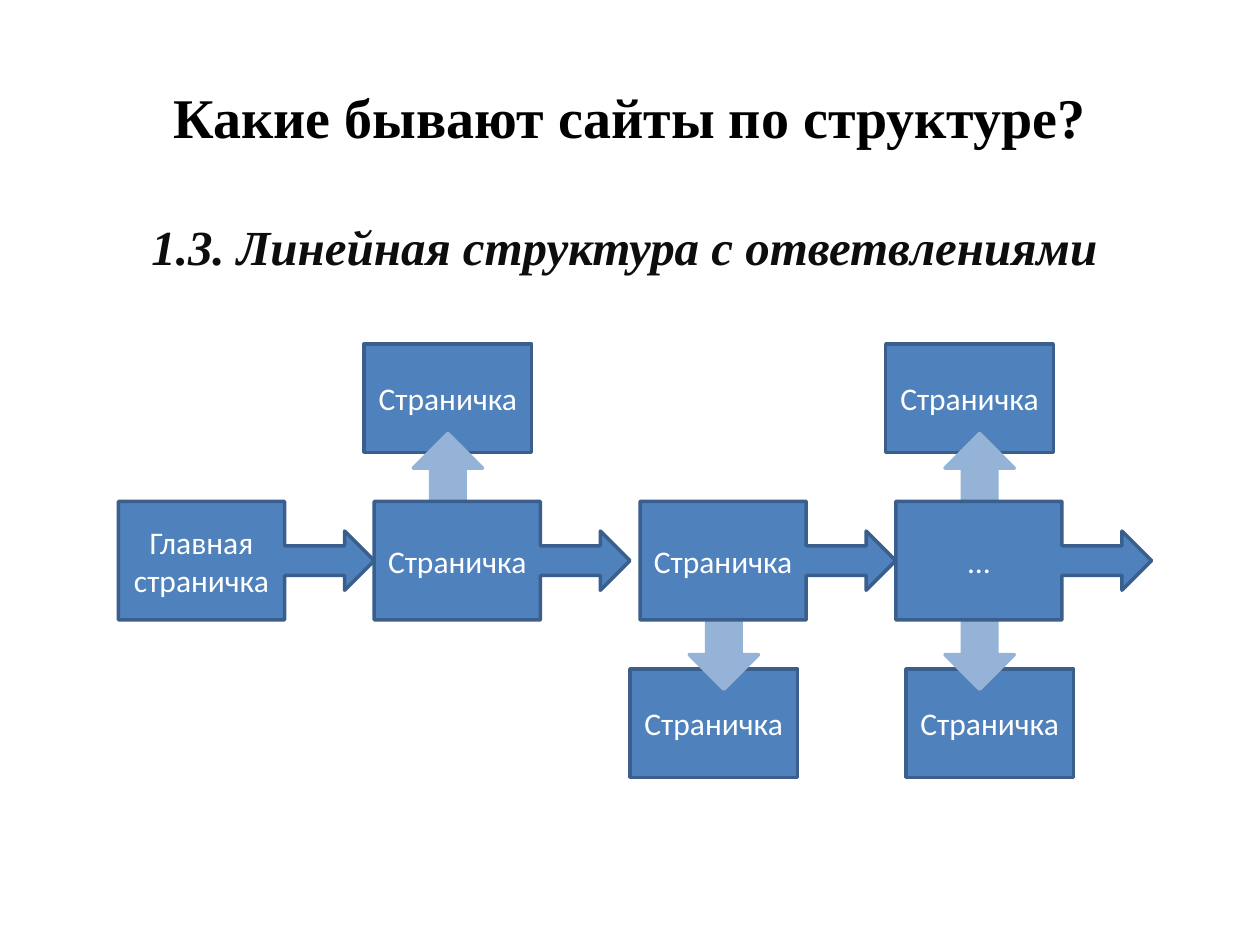
from dataclasses import dataclass

import pptx
import pptx.dml.color
import pptx.enum.shapes
import pptx.enum.text
import pptx.shapes.autoshape
import pptx.text.text
import pptx.util

Inches = pptx.util.Inches
Pt = pptx.util.Pt
RGB = pptx.dml.color.RGBColor
MSO = pptx.enum.shapes.MSO_SHAPE


@dataclass(frozen=True)
class Theme:
    heading_font: str = "Times New Roman"
    body_font: str = "Calibri"
    title_color: str = "000000"
    subtitle_color: str = "0D0D0D"
    box_fill: str = "4F81BD"
    box_line: str = "3A5F8C"
    box_text: str = "FFFFFF"
    branch: str = "95B3D7"
    title_size: int = 32
    subtitle_size: int = 28
    box_size: int = 18
    line_width: int = 2


@dataclass(frozen=True)
class Box:
    left: float
    top: float
    lines: tuple[str, ...] = ("Страничка",)


@dataclass(frozen=True)
class Branch:
    left: float
    up: bool


THEME = Theme()

UPPER, LOWER = 2.73, 5.31
PAGE_SIZE = (1.33, 0.86)
SIDE_PAGES = [Box(2.89, UPPER), Box(7.03, UPPER), Box(7.19, LOWER), Box(5, LOWER)]

BRANCH_SIZE = (0.55, 1.25)
BRANCHES = [Branch(3.28, True), Branch(7.5, True), Branch(5.47, False), Branch(7.5, False)]

CHAIN_TOP = 3.98
STEP_SIZE = (2.03, 0.94)
CHAIN = [
    Box(0.94, CHAIN_TOP, ("Главная", "страничка")),
    Box(2.97, CHAIN_TOP),
    Box(5.08, CHAIN_TOP),
    Box(7.11, CHAIN_TOP, ("…",)),
]


def write(tf: pptx.text.text.TextFrame, lines: tuple[str, ...], font: str, size: int,
          color: str, bold: bool = False, italic: bool = False) -> None:
    """Fill a text frame with centred paragraphs, one for each line."""
    tf.word_wrap = True
    tf.vertical_anchor = pptx.enum.text.MSO_ANCHOR.MIDDLE
    for i, line in enumerate(lines):
        p = tf.paragraphs[0] if i == 0 else tf.add_paragraph()
        p.alignment = pptx.enum.text.PP_ALIGN.CENTER
        r = p.add_run()
        r.text = line
        r.font.name = font
        r.font.size = Pt(size)
        r.font.bold = bold
        r.font.italic = italic
        r.font.color.rgb = RGB.from_string(color)


def place(sp, left: float, top: float, width: float, height: float) -> None:
    sp.left, sp.top = Inches(left), Inches(top)
    sp.width, sp.height = Inches(width), Inches(height)


def add_filled(shapes, kind: MSO, left: float, top: float, size: tuple[float, float],
               fill: str, line: str) -> pptx.shapes.autoshape.Shape:
    sp = shapes.add_shape(kind, Inches(left), Inches(top), *map(Inches, size))
    sp.shadow.inherit = False
    sp.fill.solid()
    sp.fill.fore_color.rgb = RGB.from_string(fill)
    sp.line.color.rgb = RGB.from_string(line)
    sp.line.width = Pt(THEME.line_width)
    return sp


def add_box(shapes, kind: MSO, box: Box, size: tuple[float, float]) -> None:
    sp = add_filled(shapes, kind, box.left, box.top, size, THEME.box_fill, THEME.box_line)
    write(sp.text_frame, box.lines, THEME.body_font, THEME.box_size, THEME.box_text)


def add_branch(shapes, branch: Branch) -> None:
    top = 3.44 if branch.up else 4.22
    sp = add_filled(shapes, MSO.UP_ARROW, branch.left, top, BRANCH_SIZE,
                    THEME.branch, THEME.branch)
    sp.rotation = 0 if branch.up else 180


def main() -> None:
    prs = pptx.Presentation()
    prs.slide_width, prs.slide_height = Inches(10), Inches(7.5)
    s = prs.slides.add_slide(prs.slide_layouts[5])

    title = s.shapes.title
    place(title, 0.5, 0.3, 9, 1.25)
    write(title.text_frame, ("Какие бывают сайты по структуре?",), THEME.heading_font,
          THEME.title_size, THEME.title_color, bold=True)

    subtitle = s.shapes.add_textbox(Inches(0.23), Inches(1.33), Inches(9.45), Inches(1.25))
    write(subtitle.text_frame, ("1.3. Линейная структура с ответвлениями",),
          THEME.heading_font, THEME.subtitle_size, THEME.subtitle_color,
          bold=True, italic=True)

    for page in SIDE_PAGES:
        add_box(s.shapes, MSO.FLOWCHART_PROCESS, page, PAGE_SIZE)
    for branch in BRANCHES:
        add_branch(s.shapes, branch)
    chain = s.shapes.add_group_shape()
    for step in CHAIN:
        add_box(chain.shapes, MSO.RIGHT_ARROW_CALLOUT, step, STEP_SIZE)

    prs.save("out.pptx")


if __name__ == "__main__":
    main()
